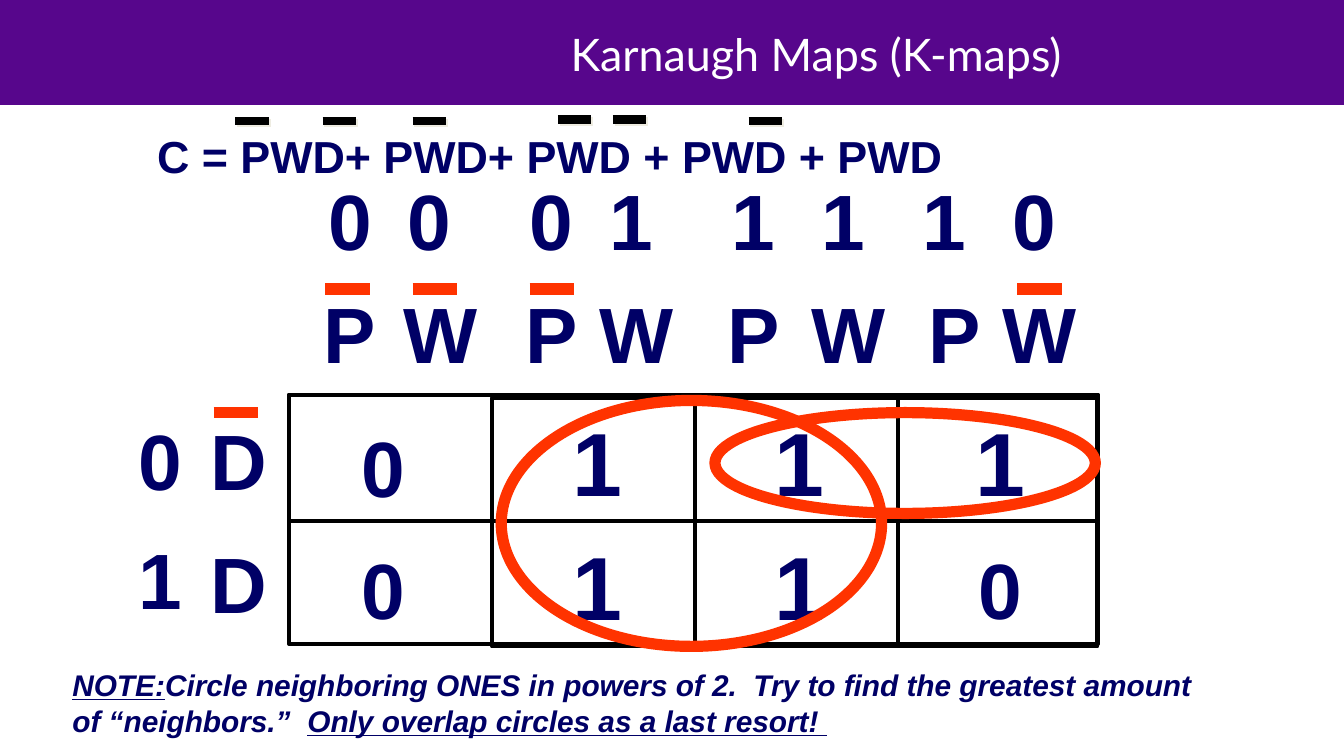
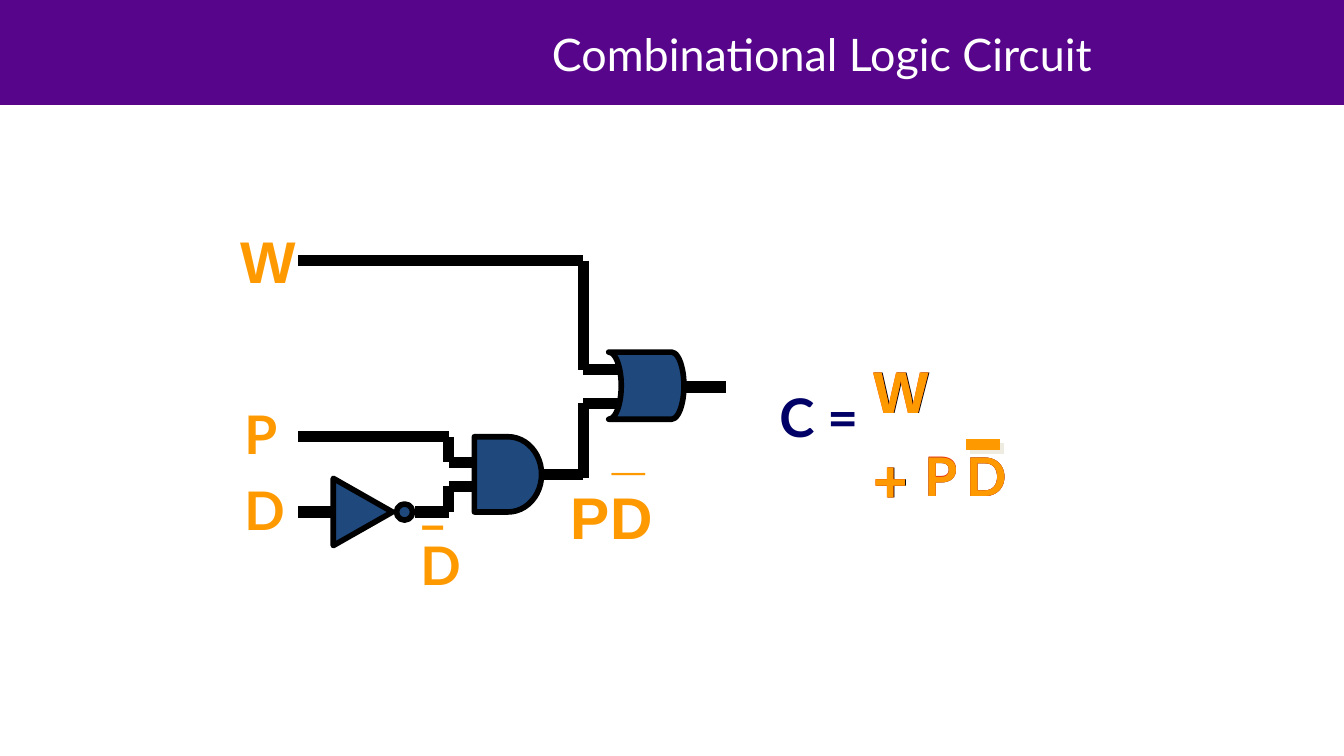
from dataclasses import dataclass, replace

from lxml import etree
from pptx import Presentation
from pptx.dml.color import RGBColor
from pptx.enum import shapes, text
from pptx.oxml import ns
from pptx.util import Inches, Pt

COLORS = {
    "band": "57068C",
    "white": "FFFFFF",
    "black": "000000",
    "navy": "000066",
    "red": "FF3300",
    "orange": "FF9900",
    "teal": "006699",
    "gate": "1F497D",
    "shade": "EEECE1",
}
SHAPE = shapes.MSO_SHAPE


@dataclass(frozen=True)
class Style:
    size: float
    color: str
    font: str = "Arial"
    bold: bool = True
    italic: bool = False
    underline: bool = False
    align: text.PP_ALIGN = text.PP_ALIGN.LEFT


TITLE = Style(24, "white", "Lato", bold=False, align=text.PP_ALIGN.CENTER)
FORMULA = Style(24, "navy")
HEADING = Style(42, "navy", align=text.PP_ALIGN.CENTER)
ONE = replace(HEADING, size=48)
NOTE = Style(16, "navy", italic=True)
SIGNAL = Style(28.5, "orange", "Lato")
TERM = Style(31.5, "orange")


def rgb(name):
    return RGBColor.from_string(COLORS[name])


def add_frame(slide, left, top, width, height, wrap=True):
    box = slide.shapes.add_textbox(*map(Inches, (left, top, width, height)))
    box.text_frame.word_wrap = wrap
    return box.text_frame


def add_run(paragraph, words, style):
    paragraph.alignment = style.align
    run = paragraph.add_run()
    run.text = words
    run.font.name = style.font
    run.font.size = Pt(style.size)
    run.font.bold = style.bold
    run.font.italic = style.italic
    run.font.underline = style.underline
    run.font.color.rgb = rgb(style.color)


def add_label(slide, box, words, style, wrap=True):
    frame = add_frame(slide, *box, wrap=wrap)
    for index, line in enumerate(words.split("\n")):
        paragraph = frame.add_paragraph() if index else frame.paragraphs[0]
        add_run(paragraph, line, style)
    return frame


def add_figure(slide, kind, box, fill=None, line=None, weight=3):
    figure = slide.shapes.add_shape(kind, *map(Inches, box))
    figure.shadow.inherit = False
    if fill:
        figure.fill.solid()
        figure.fill.fore_color.rgb = rgb(fill)
    else:
        figure.fill.background()
    if line:
        figure.line.color.rgb = rgb(line)
        figure.line.width = Pt(weight)
    else:
        figure.line.fill.background()
    return figure


def add_stroke(slide, start, end, color="black", weight=6, shadow=0):
    stroke = slide.shapes.add_connector(
        shapes.MSO_CONNECTOR.STRAIGHT, *map(Inches, (*start, *end)))
    stroke.line.color.rgb = rgb(color)
    stroke.line.width = Pt(weight)
    effects = etree.SubElement(stroke.element.spPr, ns.qn("a:effectLst"))
    if shadow:
        cast = etree.SubElement(effects, ns.qn("a:outerShdw"), blurRad="0",
                                dist=str(Pt(shadow)), dir="2700000",
                                algn="ctr", rotWithShape="0")
        etree.SubElement(cast, ns.qn("a:srgbClr"), val=COLORS["shade"])
    return stroke


def add_bar(slide, left, top, width, **look):
    add_stroke(slide, (left, top), (left + width, top), **look)


def start_slide(deck, title):
    slide = deck.slides.add_slide(deck.slide_layouts[6])
    add_figure(slide, SHAPE.RECTANGLE, (0, 0, 10.01, 0.78), fill="band")
    frame = add_label(slide, (2.48, 0.25, 7.27, 0.29), title, TITLE)
    frame.vertical_anchor = text.MSO_ANCHOR.MIDDLE
    return slide


def add_formula(slide):
    for left, top in ((1.75, 0.9), (2.4, 0.9), (3.07, 0.9),
                      (4.15, 0.89), (4.56, 0.89), (5.57, 0.9)):
        add_bar(slide, left, top, 0.25, weight=4.5, shadow=1.4)
    add_label(slide, (1.07, 0.91, 6.75, 0.51),
              "C = PWD+ PWD+ PWD + PWD + PWD", FORMULA)


def add_map_headings(slide):
    columns = (("00", 2.23, 2.23, 2.82, 0.92), ("01", 3.73, 3.73, 4.32, 0.83),
               ("11", 5.23, 5.23, 5.9, 0.83), ("10", 6.65, 6.73, 7.32, 0.83))
    for bits, bit_left, p_left, w_left, w_width in columns:
        add_label(slide, (bit_left, 1.23, 0.75, 0.8), bits[0], HEADING)
        add_label(slide, (w_left, 1.23, 0.75, 0.8), bits[1], HEADING)
        add_label(slide, (p_left, 2.07, 0.75, 0.8), "P", HEADING)
        add_label(slide, (w_left, 2.07, w_width, 0.8), "W", HEADING)
    for bit, bit_top, d_top in (("0", 3.02, 3.02), ("1", 3.9, 3.93)):
        add_label(slide, (0.82, bit_top, 0.75, 0.8), bit, HEADING)
        add_label(slide, (1.4, d_top, 0.75, 0.8), "D", HEADING)
    for left, top in ((2.42, 2.15), (3.07, 2.15), (3.94, 2.15),
                      (7.57, 2.15), (1.59, 3.07)):
        add_bar(slide, left, top, 0.33, color="red")


def add_map_grid(slide):
    for box in ((2.15, 2.94, 6.02, 1.85), (5.17, 2.96, 2.99, 1.85),
                (6.68, 2.96, 1.48, 1.85), (3.66, 2.96, 1.51, 1.85),
                (2.15, 2.94, 6.02, 0.94)):
        add_figure(slide, SHAPE.RECTANGLE, box, line="black", weight=2.25)
    for row, values in enumerate(("0111", "0110")):
        for left, value in zip((2.48, 4.07, 5.57, 7.07), values):
            if value == "1":
                add_label(slide, (left, 2.98 + 0.92 * row, 0.75, 0.9), value, ONE)
            else:
                add_label(slide, (left, 3.07 + 0.91 * row, 0.75, 0.8), value, HEADING)
    for loop in ((3.73, 2.98, 2.83, 1.83), (5.32, 3.07, 2.83, 0.75)):
        add_figure(slide, SHAPE.OVAL, loop, line="red", weight=6)


def add_note(slide):
    note = add_frame(slide, 0.44, 4.91, 8.75, 0.64).paragraphs[0]
    underlined = replace(NOTE, underline=True)
    add_run(note, "NOTE:", underlined)
    add_run(note, "Circle neighboring ONES in powers of 2.  Try to find the "
                  "greatest amount of “neighbors.”  ", NOTE)
    add_run(note, "Only overlap circles as a last resort! ", underlined)


def add_circuit(slide):
    add_label(slide, (1.69, 1.62, 0.62, 0.63), "W", TERM, wrap=False)
    add_label(slide, (1.72, 2.94, 0.5, 0.62), "P", SIGNAL)
    add_label(slide, (1.72, 3.5, 0.5, 0.56), "D", SIGNAL)

    inverter = add_figure(slide, SHAPE.FLOWCHART_EXTRACT,
                          (2.45, 3.59, 0.5, 0.44), "gate", "black")
    inverter.rotation = 90
    add_figure(slide, SHAPE.FLOWCHART_CONNECTOR,
               (2.95, 3.75, 0.12, 0.12), "gate", "black")
    and_gate = add_figure(slide, SHAPE.FLOWCHART_DELAY,
                          (3.53, 3.25, 0.5, 0.56), "gate", "black")

    and_input, or_input = 3.34, 4.34
    wires = (
        ((2.22, 1.94), (or_input, 1.94)),
        ((2.22, 3.25), (and_input, 3.25)),
        ((2.22, 3.81), (2.47, 3.81)),
        ((3.09, 3.81), (and_input, 3.81)),
        ((and_input, 3.25), (and_input, 3.44)),
        ((and_input, 3.62), (and_input, 3.81)),
        ((and_input, 3.44), (3.53, 3.44)),
        ((and_input, 3.62), (3.53, 3.62)),
        ((or_input, 1.94), (or_input, 2.75)),
        ((or_input, 3), (or_input, 3.56)),
        ((or_input, 2.75), (4.65, 2.75)),
        ((or_input, 3), (4.65, 3)),
        ((5.09, 2.88), (5.4, 2.88)),
    )
    for start, end in wires:
        add_stroke(slide, start, end)
    and_output = add_stroke(slide, (4.03, 3.53), (or_input, 3.53))
    and_output.begin_connect(and_gate, 3)

    or_gate = add_figure(slide, SHAPE.FLOWCHART_STORED_DATA,
                         (4.53, 2.62, 0.56, 0.5), "gate", "black")
    or_gate.element.spPr.xfrm.set("flipH", "1")

    add_label(slide, (3.03, 3.44, 0.5, 1.06), "_\nD", SIGNAL)
    product = add_label(slide, (4.15, 3, 0.82, 1.16), "_\nPD", TERM, wrap=False)
    overbar = product.paragraphs[0]
    overbar._p.get_or_add_pPr().set("marL", str(Inches(0.31)))


def add_inverted_product(slide, color, top):
    style = replace(SIGNAL, color=color)
    add_label(slide, (6.78, top, 0.44, 0.63), "P", style)
    add_label(slide, (7.09, 3.25, 0.56, 0.63), "D", style)


def add_result(slide):
    output = add_label(slide, (5.7, 2.34, 1.81, 0.81), "C =",
                       replace(SIGNAL, color="navy"))
    output.margin_top = Inches(0.52)
    add_inverted_product(slide, "red", 3.24)
    layers = (("black", "teal", 6.41), ("red", "red", 6.4),
              ("orange", "orange", 6.4))
    for term_color, product_color, left in layers:
        term = replace(TERM, color=term_color)
        add_label(slide, (left, 2.59, 0.62, 0.63), "W", term)
        add_inverted_product(slide, product_color, 3.25)
        add_bar(slide, 7.19, 3.31, 0.25, color=term_color, shadow=2.8)
        add_label(slide, (left, 3.25, 0.62, 0.63), "+", term)


def main():
    deck = Presentation()
    deck.slide_width = Inches(10)
    deck.slide_height = Inches(10) * 9 // 16

    karnaugh = start_slide(deck, "Karnaugh Maps (K-maps) ")
    add_formula(karnaugh)
    add_map_headings(karnaugh)
    add_map_grid(karnaugh)
    add_note(karnaugh)

    circuit = start_slide(deck, "Combinational Logic Circuit")
    add_circuit(circuit)
    add_result(circuit)

    deck.save("out.pptx")


if __name__ == "__main__":
    main()
